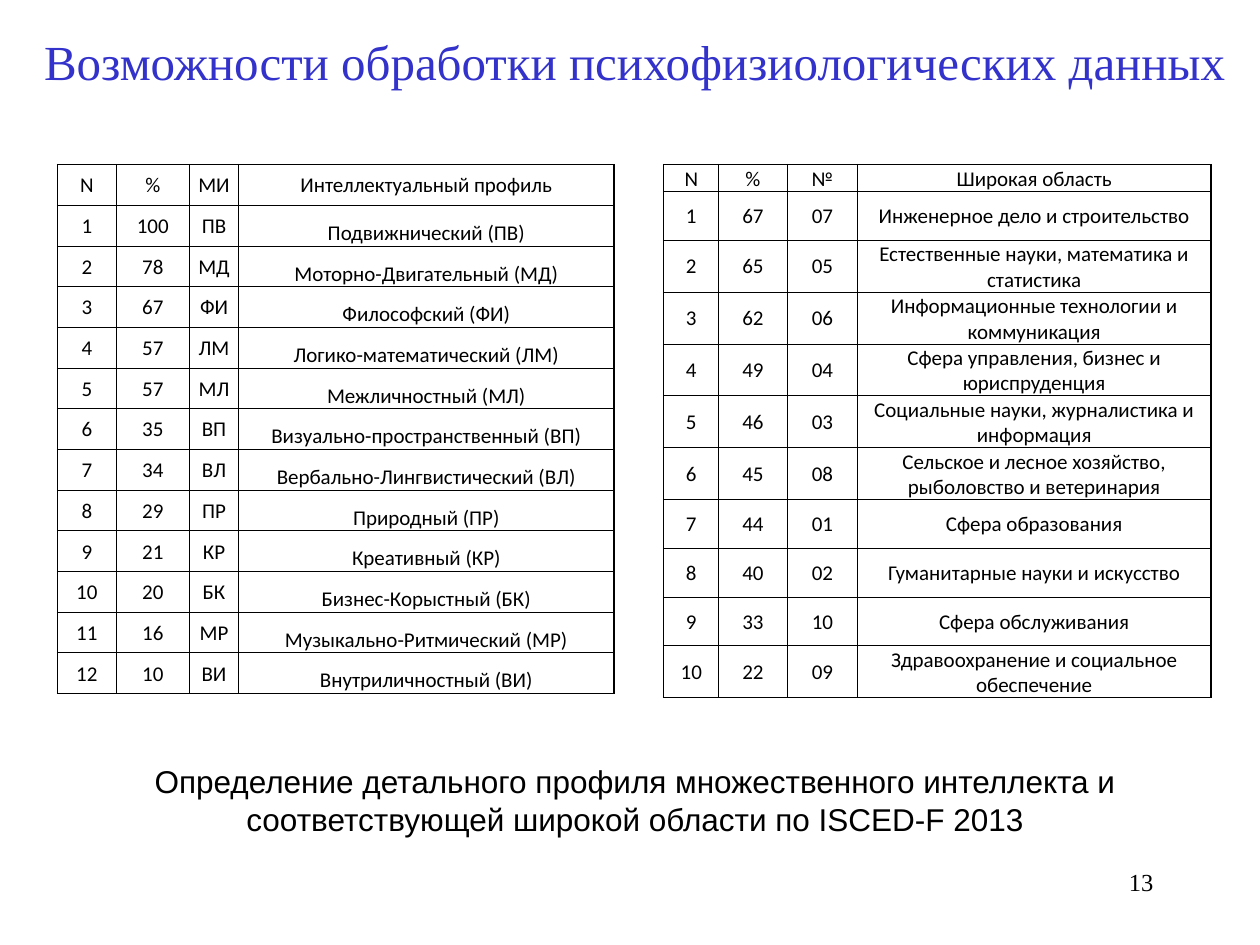
"""Build a slide with two ranked tables, a title and a caption."""
from lxml.etree import SubElement
from pptx import Presentation
from pptx.dml.color import RGBColor
from pptx.enum.text import MSO_ANCHOR, PP_ALIGN
from pptx.oxml.ns import qn
from pptx.util import Cm, Pt

BLACK = RGBColor(0x00, 0x00, 0x00)
BLUE = RGBColor(0x33, 0x33, 0xCC)
THIN, THICK = Pt(0.5), Pt(1)
CELL_MARGINS = {
    "margin_left": Cm(0.03),
    "margin_right": Cm(0.03),
    "margin_top": Cm(0.03),
    "margin_bottom": Cm(0),
}


def write_text(para, text, color, align, font_format):
    para.alignment = align
    span = para.add_run()
    span.text = text
    for name, value in font_format.items():
        setattr(span.font, name, value)
    span.font.color.rgb = color


def draw_border(cell, side, width):
    line = SubElement(cell._tc.get_or_add_tcPr(), qn(f"a:ln{side}"), w=str(width))
    fill = SubElement(line, qn("a:solidFill"))
    SubElement(fill, qn("a:srgbClr"), val=str(BLACK))


deck = Presentation()
deck.slide_width, deck.slide_height = Cm(25.4), Cm(19.05)
page = deck.slides.add_slide(deck.slide_layouts[6])

texts = [
    ("13", (20.22, 17.35, 3.28, 1.27), MSO_ANCHOR.TOP, PP_ALIGN.RIGHT, BLACK,
     {"name": "Times New Roman", "size": Pt(14)}),
    ("Возможности обработки психофизиологических данных",
     (0.56, 0.2, 24.46, 2.06), MSO_ANCHOR.MIDDLE, PP_ALIGN.CENTER, BLUE,
     {"name": "Times New Roman", "size": Pt(28)}),
    ("Определение детального профиля множественного интеллекта и "
     "соответствующей широкой области по ISCED-F 2013",
     (1.17, 15.24, 23.27, 1.8), MSO_ANCHOR.TOP, PP_ALIGN.CENTER, BLACK,
     {"name": "Arial", "size": Pt(18)}),
]
for text, place, anchor, align, color, font_format in texts:
    box = page.shapes.add_textbox(*map(Cm, place))
    box.text_frame.word_wrap = True
    box.text_frame.vertical_anchor = anchor
    write_text(box.text_frame.paragraphs[0], text, color, align, font_format)

profiles = [
    ("N", "%", "МИ", "Интеллектуальный профиль"),
    ("1", "100", "ПВ", "Подвижнический (ПВ)"),
    ("2", "78", "МД", "Моторно-Двигательный (МД)"),
    ("3", "67", "ФИ", "Философский (ФИ)"),
    ("4", "57", "ЛМ", "Логико-математический (ЛМ)"),
    ("5", "57", "МЛ", "Межличностный (МЛ)"),
    ("6", "35", "ВП", "Визуально-пространственный (ВП)"),
    ("7", "34", "ВЛ", "Вербально-Лингвистический (ВЛ)"),
    ("8", "29", "ПР", "Природный (ПР)"),
    ("9", "21", "КР", "Креативный (КР)"),
    ("10", "20", "БК", "Бизнес-Корыстный (БК)"),
    ("11", "16", "МР", "Музыкально-Ритмический (МР)"),
    ("12", "10", "ВИ", "Внутриличностный (ВИ)"),
]
fields = [
    ("N", "%", "№", "Широкая область"),
    ("1", "67", "07", "Инженерное дело и строительство"),
    ("2", "65", "05", "Естественные науки, математика и статистика"),
    ("3", "62", "06", "Информационные технологии и коммуникация"),
    ("4", "49", "04", "Сфера управления, бизнес и юриспруденция"),
    ("5", "46", "03", "Социальные науки, журналистика и информация"),
    ("6", "45", "08", "Сельское и лесное хозяйство, рыболовство и ветеринария"),
    ("7", "44", "01", "Сфера образования"),
    ("8", "40", "02", "Гуманитарные науки и искусство"),
    ("9", "33", "10", "Сфера обслуживания"),
    ("10", "22", "09", "Здравоохранение и социальное обеспечение"),
]
tables = [
    (profiles, 1.16, (1.18, 1.48, 0.99, 7.57), 0.82, 0.82, MSO_ANCHOR.BOTTOM),
    (fields, 13.38, (1.11, 1.38, 1.42, 7.12), 0.52, 0.98, MSO_ANCHOR.MIDDLE),
]
for rows, left, widths, header_height, row_height, name_anchor in tables:
    height = header_height + row_height * (len(rows) - 1)
    frame = page.shapes.add_table(
        len(rows), len(widths), Cm(left), Cm(3.32), Cm(sum(widths)), Cm(height))
    table = frame.table
    table.first_row = table.horz_banding = False
    for column, width in zip(table.columns, widths):
        column.width = Cm(width)
    last_row, last_column = len(rows) - 1, len(widths) - 1
    for r, row in enumerate(rows):
        table.rows[r].height = Cm(row_height if r else header_height)
        for c, text in enumerate(row):
            cell = table.cell(r, c)
            for name, value in CELL_MARGINS.items():
                setattr(cell, name, value)
            is_name = r > 0 and c == last_column
            cell.vertical_anchor = name_anchor if is_name else MSO_ANCHOR.MIDDLE
            write_text(cell.text_frame.paragraphs[0], text, BLACK, PP_ALIGN.CENTER,
                       {"name": "Calibri", "size": Pt(12)})
            thick_sides = {
                "L": c == 0 or (r == 0 and c == last_column),
                "R": c == last_column or (r == 0 and c == last_column - 1),
                "T": r <= 1,
                "B": r in (0, last_row),
            }
            for side, is_thick in thick_sides.items():
                draw_border(cell, side, THICK if is_thick else THIN)
            cell.fill.background()

deck.save("out.pptx")
